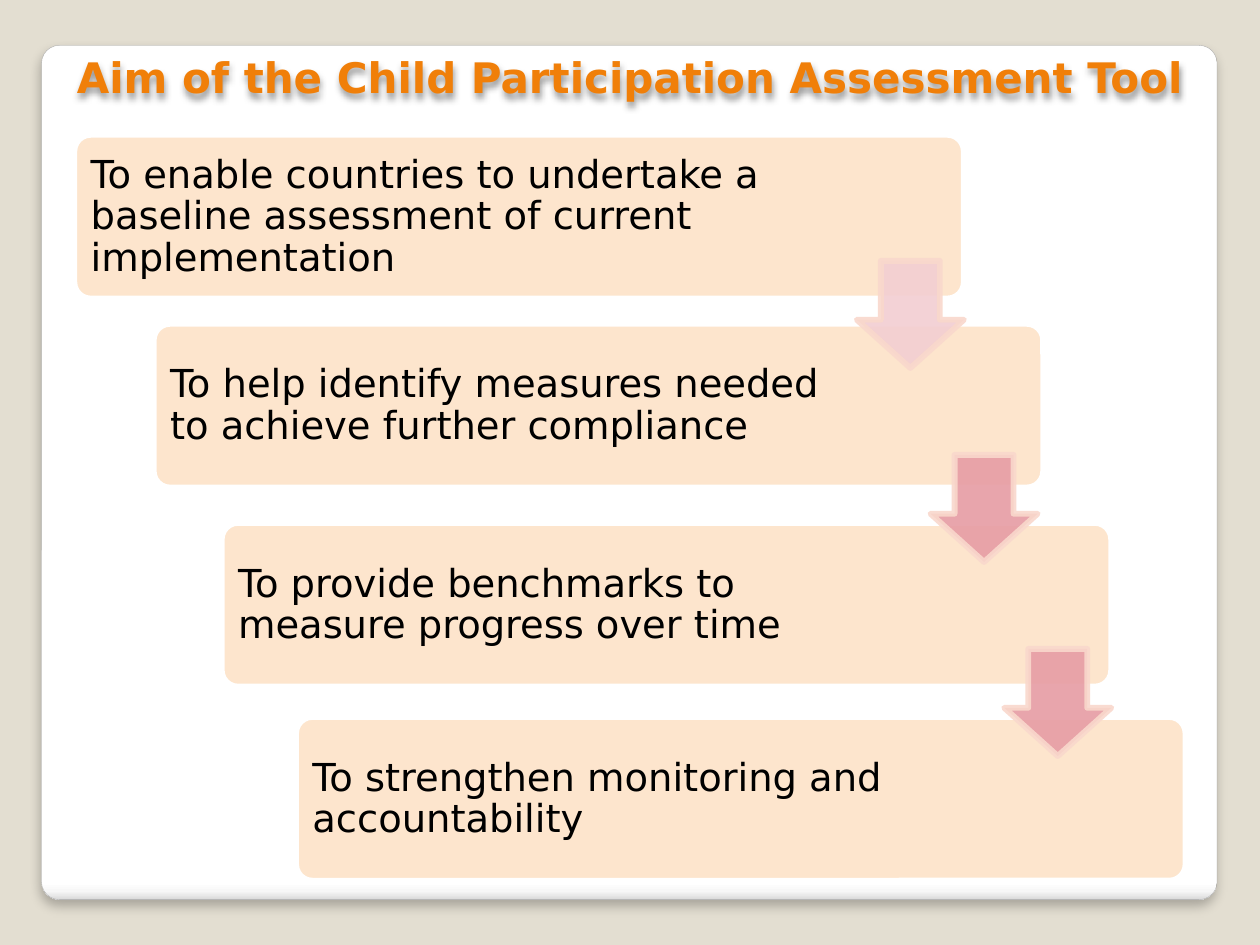
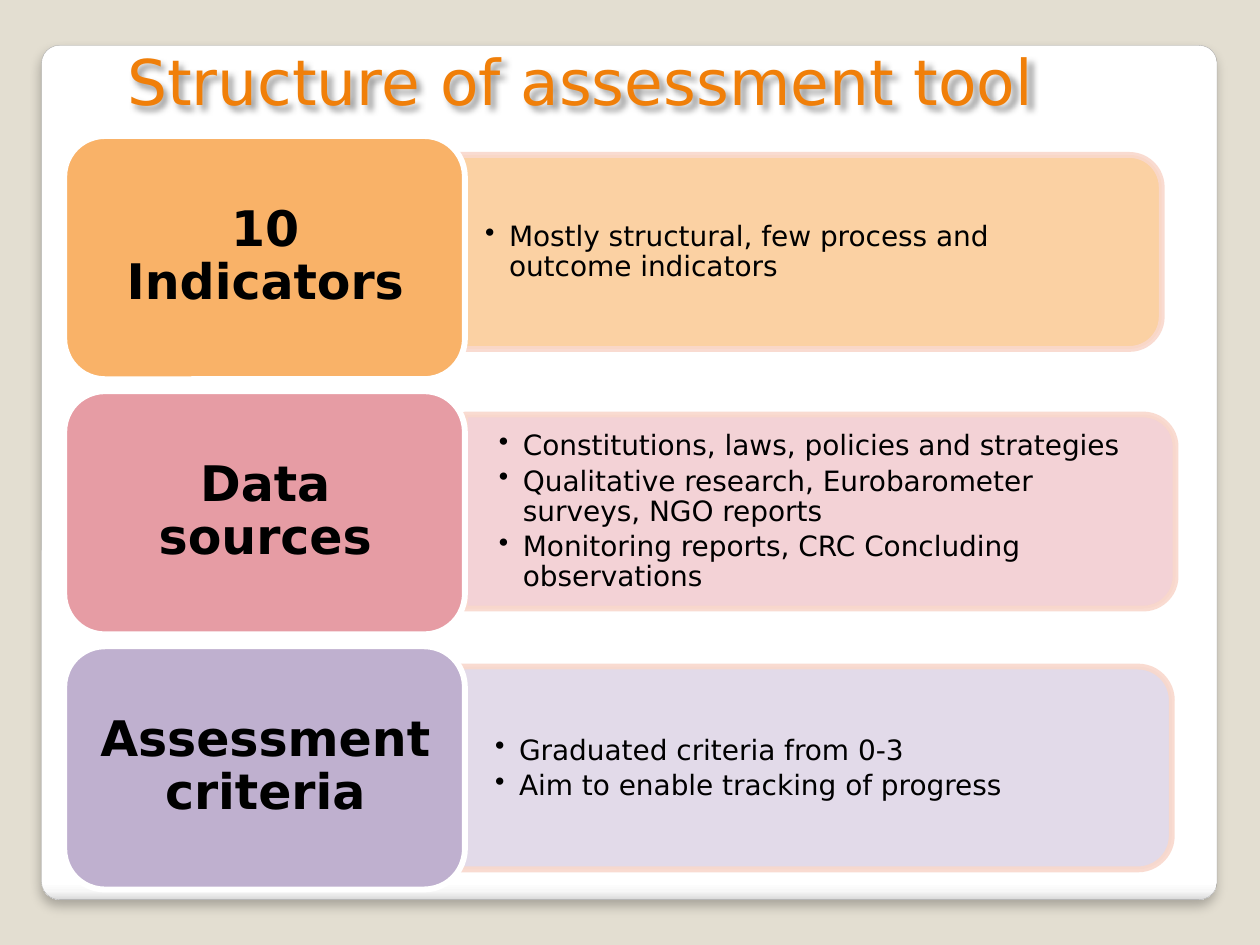
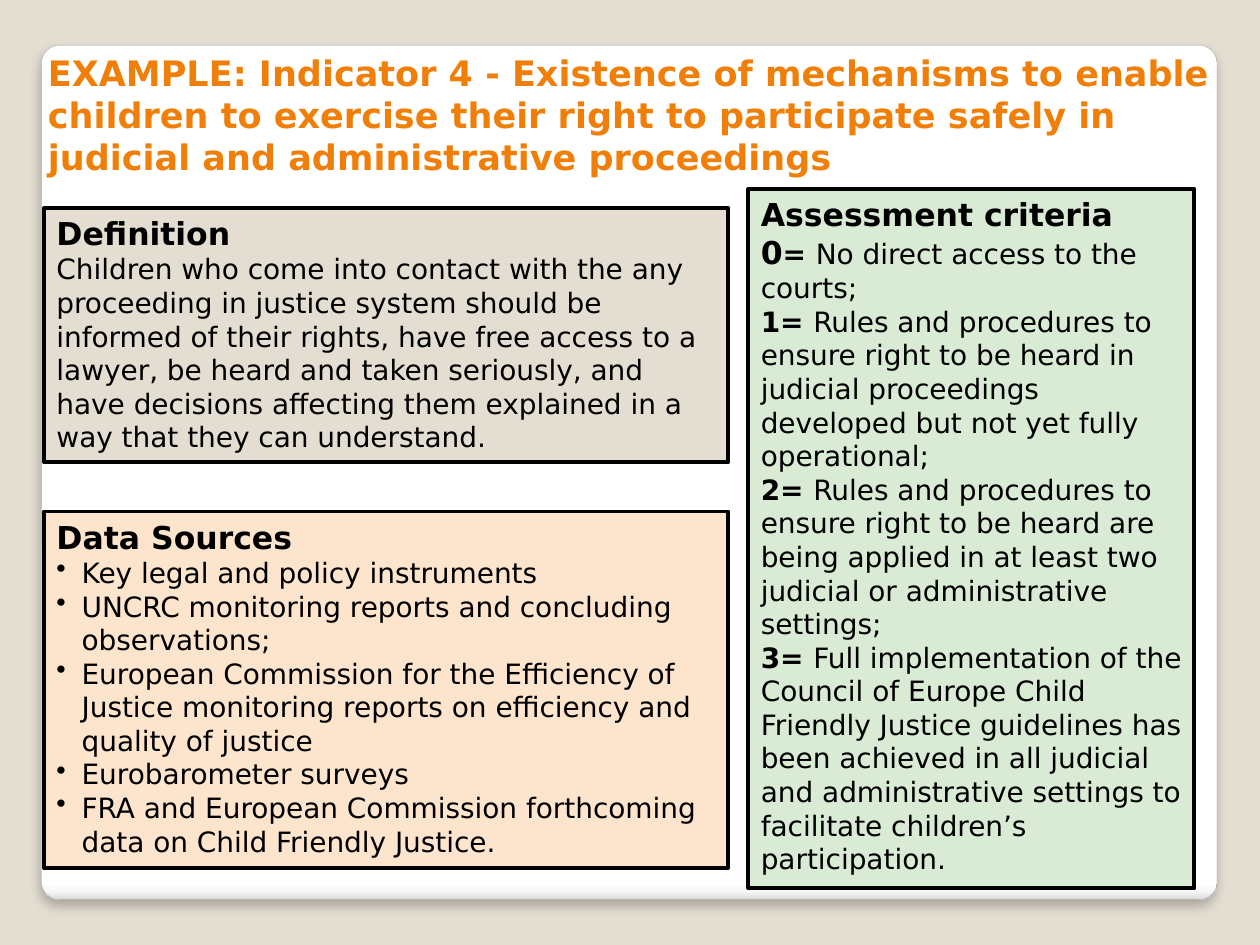
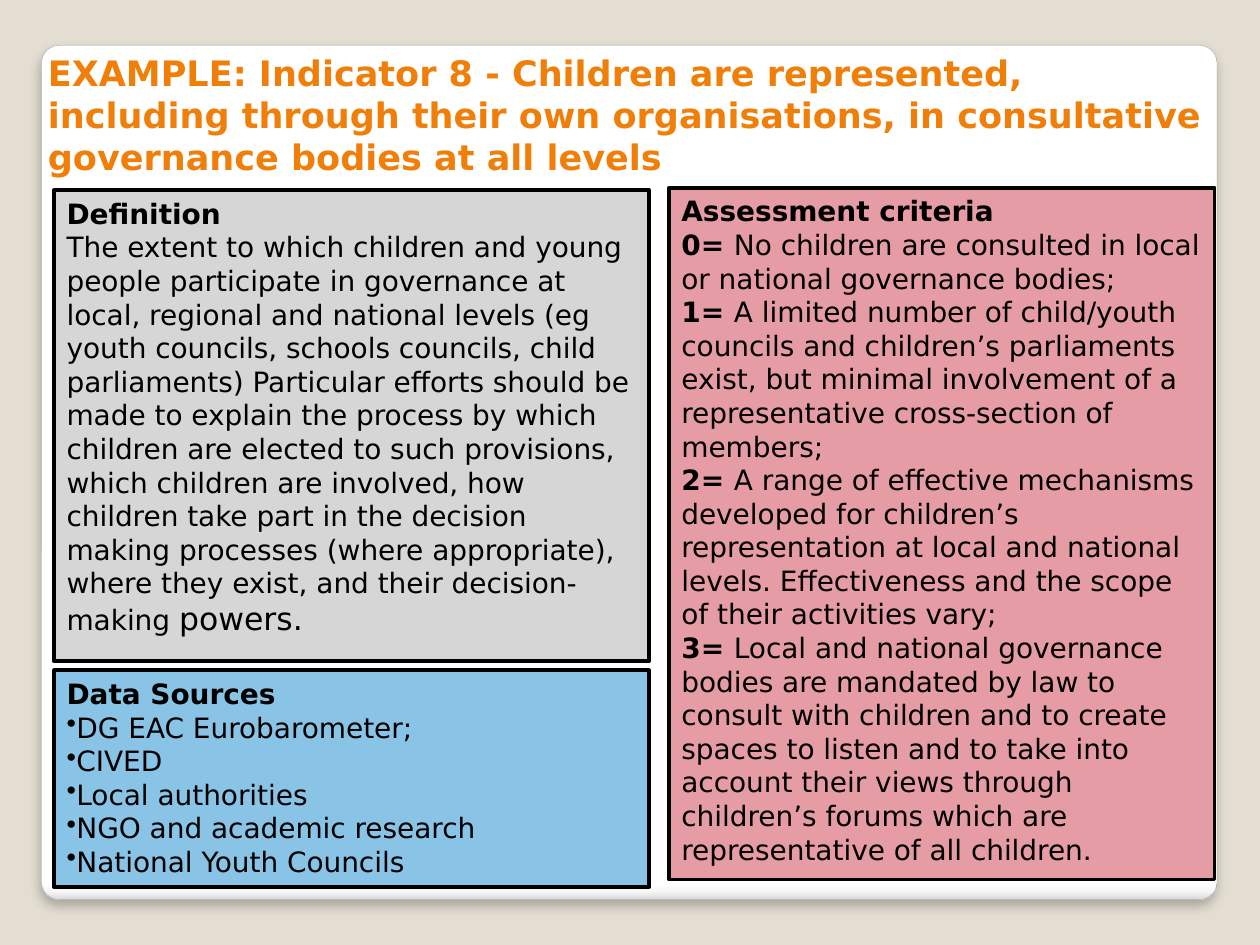
from lxml import etree
from pptx import Presentation
from pptx import util as u
from pptx.dml.color import RGBColor
from pptx.enum import shapes, text
from pptx.oxml.ns import qn

# Shared look
FONT = "DejaVu Sans"
BLACK = RGBColor(0x00, 0x00, 0x00)
WHITE = RGBColor(0xFF, 0xFF, 0xFF)
ORANGE = RGBColor(0xF0, 0x7F, 0x09)
SAND = RGBColor(0xE3, 0xDE, 0xD1)
PEACH = RGBColor(0xFD, 0xE5, 0xCD)
BLUSH = RGBColor(0xF9, 0xD8, 0xCC)
AMBER = RGBColor(0xF9, 0xB2, 0x68)
PALE_AMBER = RGBColor(0xFB, 0xCC, 0x9A)
ROSE = RGBColor(0xE6, 0x9C, 0xA4)
PALE_ROSE = RGBColor(0xF2, 0xCE, 0xD2)
LILAC = RGBColor(0xBF, 0xB0, 0xCF)
PALE_LILAC = RGBColor(0xDF, 0xD7, 0xE7)
MINT = RGBColor(0xD9, 0xEA, 0xD5)
SILVER = RGBColor(0xD6, 0xD6, 0xD6)
SKY = RGBColor(0x89, 0xC3, 0xE5)
EDGE_GREY = RGBColor(0xA4, 0xA4, 0xA4)

KIND = shapes.MSO_SHAPE
LEFT, CENTER = text.PP_ALIGN.LEFT, text.PP_ALIGN.CENTER
TOP, MIDDLE = text.MSO_ANCHOR.TOP, text.MSO_ANCHOR.MIDDLE

# Text styles: size, bold
LARGE_BOLD, BOLD = (18, True), (16, True)
LARGE, PLAIN = (18, False), (16, False)


def add_block(page, kind, at, fill, line, width=3.35, opacity=100):
    box = page.shapes.add_shape(kind, *[u.Inches(value) for value in at])
    box.shadow.inherit = False
    box.fill.solid()
    box.fill.fore_color.rgb = fill
    box.line.color.rgb = line
    box.line.width = u.Pt(width)
    if opacity < 100:
        for color in box.element.spPr.iter(qn("a:srgbClr")):
            etree.SubElement(color, qn("a:alpha"), val=str(opacity * 1000))
    return box


def write(box, paragraphs, color=BLACK, align=LEFT, anchor=TOP, inset=(0.1, 0.05),
          spacing=None, after=0, indent=None, first_bullet=0):
    frame = box.text_frame
    frame.word_wrap = True
    frame.vertical_anchor = anchor
    frame.margin_left = frame.margin_right = u.Inches(inset[0])
    frame.margin_top = frame.margin_bottom = u.Inches(inset[1])
    for index, spans in enumerate(paragraphs):
        para = frame.add_paragraph() if index else frame.paragraphs[0]
        para.alignment = align
        para.line_spacing = spacing
        para.space_after = u.Pt(after)
        for words, (size, bold) in spans:
            span = para.add_run()
            span.text = words
            span.font.name = FONT
            span.font.size = u.Pt(size)
            span.font.bold = bold
            span.font.color.rgb = color
        if indent is not None and index >= first_bullet:
            properties = para._p.get_or_add_pPr()
            properties.set("marL", str(u.Inches(indent)))
            properties.set("indent", str(-u.Inches(indent)))
            etree.SubElement(properties, qn("a:buChar"), char="•")


deck = Presentation()
deck.slide_width, deck.slide_height = u.Inches(10), u.Inches(7.5)
layout = deck.slide_layouts[5]
background = deck.slide_master.background.fill
background.solid()
background.fore_color.rgb = SAND

# Pages with their titles: wording, place, style
titles = [
    ("Aim of the Child Participation Assessment Tool", (0.51, 0.36, 9.13, 0.5), (24, True)),
    ("Structure of assessment tool", (0.91, 0.29, 8.11, 0.71), (36, False)),
    ("EXAMPLE: Indicator 4 - Existence of mechanisms to enable children to exercise "
     "their right to participate safely in judicial and administrative proceedings",
     (0.28, 0.36, 9.45, 1.11), (20, True)),
    ("EXAMPLE: Indicator 8 - Children are represented, including through their own "
     "organisations, in consultative governance bodies at all levels",
     (0.28, 0.36, 9.45, 1.11), (20, True)),
]
pages = []
for words, at, style in titles:
    page = deck.slides.add_slide(layout)
    title = page.shapes.title
    title.left, title.top, title.width, title.height = [u.Inches(value) for value in at]
    write(title, [[(words, style)]], color=ORANGE)
    title.text_frame.auto_size = text.MSO_AUTO_SIZE.SHAPE_TO_FIT_TEXT
    pages.append(page)
aim_page, structure_page, *example_pages = pages

# White panel, shared through the layout
panel = add_block(aim_page, KIND.ROUNDED_RECTANGLE, (0.33, 0.36, 9.33, 6.78),
                  WHITE, EDGE_GREY, 0.16)
panel.adjustments[0] = 0.021
panel.fill.gradient()
panel.fill.gradient_angle = 270
stops = panel.element.spPr.find(".//" + qn("a:gsLst"))
stops.clear()
for position, shade in [(0, "FFFFFF"), (98, "FFFFFF"), (99, "F7F7F7"), (100, "DADADA")]:
    stop = etree.SubElement(stops, qn("a:gs"), pos=str(position * 1000))
    etree.SubElement(stop, qn("a:srgbClr"), val=shade)
layout.shapes.element.insert(2, panel.element)

# Shadows: shape, opacity, blur, distance, direction
for box, opacity, blur, distance, direction in [
    (panel, 25, 6, 4, 90),
    (aim_page.shapes.title, 40, 4, 3, 90),
    (structure_page.shapes.title, 40, 4, 3, 45),
]:
    box.shadow.inherit = False
    effects = box.element.spPr.find(qn("a:effectLst"))
    shadow = etree.SubElement(effects, qn("a:outerShdw"), blurRad=str(u.Pt(blur)),
                              dist=str(u.Pt(distance)), dir=str(direction * 60000),
                              algn="tl", rotWithShape="0")
    tint = etree.SubElement(shadow, qn("a:srgbClr"), val="000000")
    etree.SubElement(tint, qn("a:alpha"), val=str(opacity * 1000))

# Aim: staircase of four steps
steps = [
    (0.59, 1.07, "To enable countries to undertake a baseline assessment of current implementation"),
    (1.22, 2.57, "To help identify measures needed to achieve further compliance"),
    (1.76, 4.15, "To provide benchmarks to measure progress over time"),
    (2.35, 5.69, "To strengthen monitoring and accountability"),
]
for left, top, words in steps:
    step = add_block(aim_page, KIND.ROUNDED_RECTANGLE, (left, top, 7.06, 1.3), PEACH, WHITE)
    step.adjustments[0] = 0.1
    label = aim_page.shapes.add_textbox(u.Inches(left + 0.04), u.Inches(top + 0.04),
                                        u.Inches(5.54), u.Inches(1.23))
    write(label, [[(words, (22, False))]], anchor=MIDDLE, inset=(0.09, 0.09), spacing=0.9)

for index, fill in enumerate([PALE_ROSE, ROSE, ROSE]):
    arrow = add_block(aim_page, KIND.DOWN_ARROW,
                      (6.8 + 0.585 * index, 2.07 + 1.54 * index, 0.85, 0.85),
                      fill, BLUSH, opacity=90)
    arrow.adjustments[0], arrow.adjustments[1] = 0.55, 0.45

# Structure: heading, its fill, band fill, band place and height, points
rows = [
    ("10 Indicators", AMBER, PALE_AMBER, 3.58, 1.23, 1.54,
     ["Mostly structural, few process and outcome indicators"]),
    ("Data sources", ROSE, PALE_ROSE, 3.69, 3.29, 1.54,
     ["Constitutions, laws, policies and strategies",
      "Qualitative research, Eurobarometer surveys, NGO reports",
      "Monitoring reports, CRC Concluding observations"]),
    ("Assessment criteria", LILAC, PALE_LILAC, 3.66, 5.29, 1.61,
     ["Graduated criteria from 0-3", "Aim to enable tracking of progress"]),
]
BAND_WIDTH = 5.64
for index, (heading, fill, band_fill, left, top, height, points) in enumerate(rows):
    # The band is an upright shape turned a quarter, about the same centre
    turn = (BAND_WIDTH - height) / 2
    band = add_block(structure_page, KIND.ROUND_2_SAME_RECTANGLE,
                     (left + turn, top - turn, height, BAND_WIDTH),
                     band_fill, BLUSH, opacity=90)
    band.rotation = 90
    details = structure_page.shapes.add_textbox(u.Inches(left), u.Inches(top + 0.08),
                                                u.Inches(5.57), u.Inches(height - 0.15))
    write(details, [[(point, PLAIN)] for point in points], anchor=MIDDLE,
          inset=(0.27, 0.14), spacing=0.9, after=2.8, indent=0.19)

    row_top = 1.08 + 2.025 * index
    add_block(structure_page, KIND.ROUNDED_RECTANGLE, (0.51, row_top, 3.18, 1.93), fill, WHITE)
    label = structure_page.shapes.add_textbox(u.Inches(0.61), u.Inches(row_top + 0.09),
                                              u.Inches(2.99), u.Inches(1.74))
    write(label, [[(heading, (28, True))]], align=CENTER, anchor=MIDDLE,
          inset=(0.12, 0.06), spacing=0.9)

# Examples: place, fill, bullet indent, paragraphs of styled spans
examples = [
    [
        ((0.35, 1.65, 5.43, 2.02), SAND, None, [
            [("Definition", LARGE_BOLD)],
            [("Children who come into contact with the any", PLAIN)],
            [("proceeding in justice system should be informed of their rights, have free "
              "access to a lawyer, be heard and taken seriously, and have decisions "
              "affecting them explained in a way that they can understand.", PLAIN)],
        ]),
        ((0.35, 4.06, 5.43, 2.83), PEACH, 0.2, [
            [("Data Sources", LARGE_BOLD)],
            [("Key legal and policy instruments", PLAIN)],
            [("UNCRC monitoring reports and concluding observations;", PLAIN)],
            [("European Commission for the Efficiency of Justice monitoring reports on "
              "efficiency and quality of justice", PLAIN)],
            [("Eurobarometer surveys", PLAIN)],
            [("FRA and European Commission forthcoming data on Child Friendly Justice.", PLAIN)],
        ]),
        ((5.94, 1.5, 3.54, 5.55), MINT, None, [
            [("Assessment criteria", LARGE_BOLD)],
            [("0", LARGE_BOLD), ("= ", BOLD), ("No direct access to the courts;", PLAIN)],
            [("1= ", BOLD),
             ("Rules and procedures to ensure right to be heard in judicial proceedings "
              "developed but not yet fully operational;", PLAIN)],
            [("2= ", BOLD),
             ("Rules and procedures to ensure right to be heard are being applied in at "
              "least two judicial or administrative settings;", PLAIN)],
            [("3= ", BOLD),
             ("Full implementation of the Council of Europe Child Friendly Justice "
              "guidelines has been achieved in all judicial and administrative settings "
              "to facilitate children’s participation.", PLAIN)],
        ]),
    ],
    [
        ((0.43, 1.51, 4.72, 3.74), SILVER, None, [
            [("Definition", BOLD)],
            [("The extent to which children and young people participate in governance at "
              "local, regional and national levels (eg youth councils, schools councils, "
              "child parliaments) Particular efforts should be made to explain the process "
              "by which children are elected to such provisions, which children are "
              "involved, how children take part in the decision making processes (where "
              "appropriate), where they exist, and their decision-making ", PLAIN),
             ("powers.", LARGE)],
        ]),
        ((0.43, 5.32, 4.72, 1.72), SKY, 0, [
            [("Data Sources", BOLD)],
            [("DG EAC Eurobarometer;", PLAIN)],
            [("CIVED", PLAIN)],
            [("Local authorities", PLAIN)],
            [("NGO and academic research", PLAIN)],
            [("National Youth Councils", PLAIN)],
        ]),
        ((5.31, 1.49, 4.33, 5.49), ROSE, None, [
            [("Assessment criteria", BOLD)],
            [("0= ", BOLD),
             ("No children are consulted in local or national governance bodies;", PLAIN)],
            [("1= ", BOLD),
             ("A limited number of child/youth councils and children’s parliaments exist, "
              "but minimal involvement of a representative cross-section of members;", PLAIN)],
            [("2= ", BOLD),
             ("A range of effective mechanisms developed for children’s representation at "
              "local and national levels. Effectiveness and the scope of their activities "
              "vary;", PLAIN)],
            [("3= ", BOLD),
             ("Local and national governance bodies are mandated by law to consult with "
              "children and to create spaces to listen and to take into account their "
              "views through children’s forums which are representative of all children.",
              PLAIN)],
        ]),
    ],
]
for page, boxes in zip(example_pages, examples):
    for at, fill, indent, paragraphs in boxes:
        box = add_block(page, KIND.RECTANGLE, at, fill, BLACK, 2.25)
        write(box, paragraphs, indent=indent, first_bullet=1)

deck.save("out.pptx")
